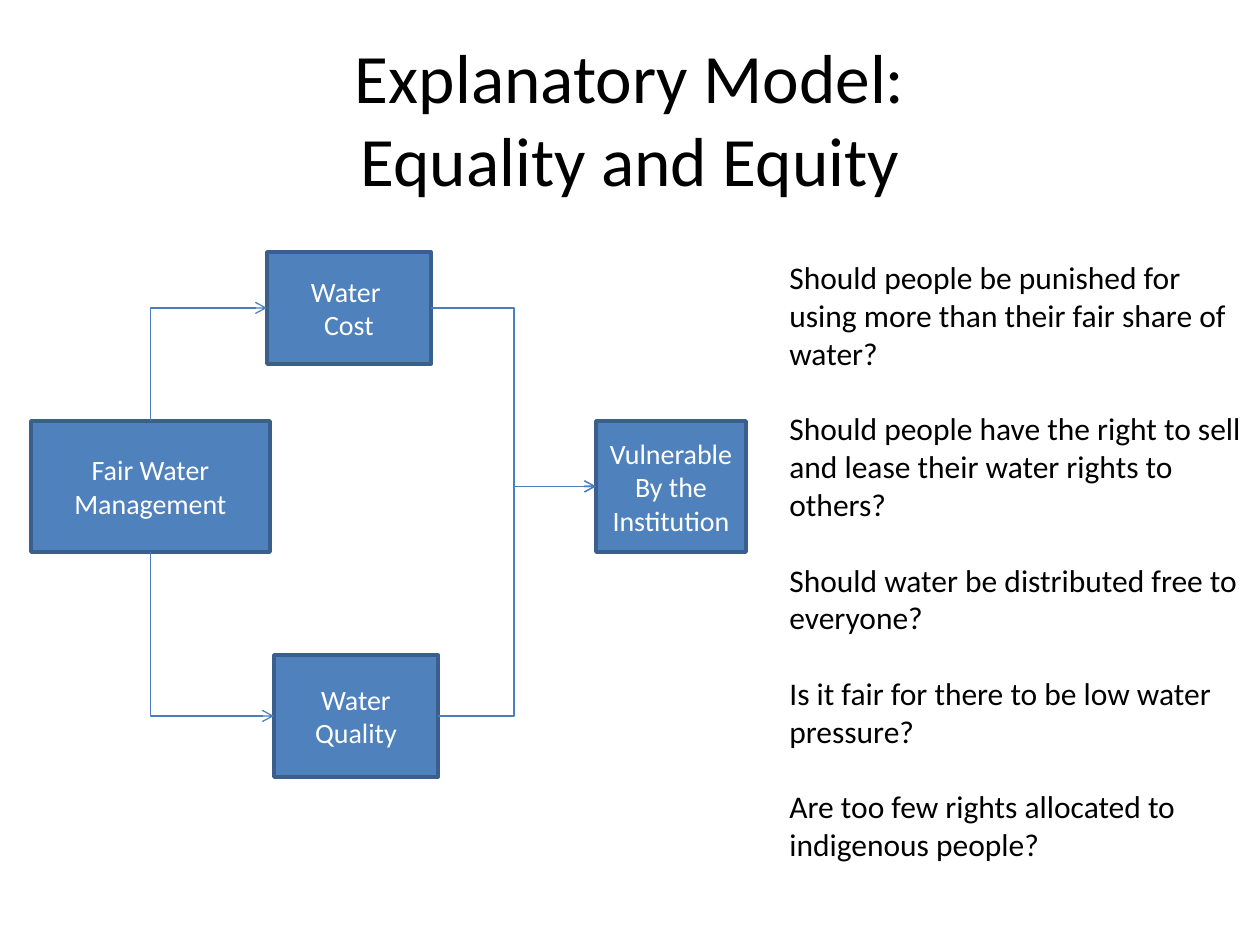
from lxml import etree
from pptx import Presentation
from pptx.dml.color import RGBColor
from pptx.enum.shapes import MSO_CONNECTOR, MSO_SHAPE
from pptx.enum.text import MSO_ANCHOR, PP_ALIGN
from pptx.oxml.ns import qn
from pptx.util import Pt

ELBOW = MSO_CONNECTOR.ELBOW
PROCESS = MSO_SHAPE.FLOWCHART_PROCESS
MIDDLE, TOP = MSO_ANCHOR.MIDDLE, MSO_ANCHOR.TOP
CENTER, LEFT = PP_ALIGN.CENTER, PP_ALIGN.LEFT
BLACK = RGBColor(0x00, 0x00, 0x00)
WHITE = RGBColor(0xFF, 0xFF, 0xFF)
BLUE = RGBColor(0x4F, 0x81, 0xBD)
EDGE = RGBColor(0x3A, 0x5F, 0x8C)
WIRE = RGBColor(0x4B, 0x7E, 0xBC)
FONT = "Calibri"

# Content: left, top, width, height in px
TITLE = "Explanatory Model:\vEquality and Equity"
BOXES = {
    "fair": ("Fair Water Management", (31, 421, 239, 131)),
    "cost": ("Water \nCost", (267, 252, 164, 112)),
    "quality": ("Water Quality", (274, 655, 164, 122)),
    "institution": ("Vulnerable\nBy the Institution", (596, 421, 150, 131)),
}
QUESTIONS = [
    "Should people be punished for using more than their fair share of water?",
    "Should people have the right to sell and lease their water rights to others?",
    "Should water be distributed free to everyone?",
    "Is it fair for there to be low water pressure?",
    "Are too few rights allocated to indigenous people?",
]
# Start box, start side, end box; every arrow enters at the left side
ARROWS = [
    ("fair", "bottom", "quality"),
    ("fair", "top", "cost"),
    ("cost", "right", "institution"),
    ("quality", "right", "institution"),
]
BEND = 514  # x of the shared vertical run


def px(n):
    return round(n * 914400 / 126)


def write(shape, text, size, color, align, anchor, gap=0):
    frame = shape.text_frame
    frame.word_wrap = True
    frame.vertical_anchor = anchor
    frame.text = text
    for para in frame.paragraphs:
        para.alignment = align
        para.space_after = Pt(gap)
        for run in para.runs:
            run.font.name = FONT
            run.font.size = Pt(size)
            run.font.color.rgb = color


def side(name, edge):
    x, y, w, h = BOXES[name][1]
    return {
        "top": (x + w / 2, y),
        "bottom": (x + w / 2, y + h),
        "left": (x, y + h / 2),
        "right": (x + w, y + h / 2),
    }[edge]


def add_arrow(slide, start, edge, end):
    x1, y1 = side(start, edge)
    x2, y2 = side(end, "left")
    line = slide.shapes.add_connector(ELBOW, px(x1), px(y1), px(x2), px(y2))
    line.line.color.rgb = WIRE
    line.line.width = Pt(0.75)
    # A vertical start turns at once, others turn at the shared bend
    bend = BEND if edge == "right" else x1
    ratio = round((bend - x1) / (x2 - x1) * 100000)
    props = line._element.spPr
    guides = props.find(qn("a:prstGeom")).get_or_add_avLst()
    etree.SubElement(guides, qn("a:gd"), name="adj1", fmla=f"val {ratio}")
    etree.SubElement(props.find(qn("a:ln")), qn("a:tailEnd"), type="arrow")
    etree.SubElement(props, qn("a:effectLst"))


def main():
    deck = Presentation()
    deck.slide_width, deck.slide_height = px(1260), px(945)
    slide = deck.slides.add_slide(deck.slide_layouts[6])

    # Title
    title = slide.shapes.add_textbox(px(63), px(38), px(1134), px(158))
    write(title, TITLE, 39.6, BLACK, CENTER, MIDDLE)

    # Boxes of the model
    for text, place in BOXES.values():
        box = slide.shapes.add_shape(PROCESS, *map(px, place))
        box.shadow.inherit = False
        box.fill.solid()
        box.fill.fore_color.rgb = BLUE
        box.line.color.rgb = EDGE
        box.line.width = Pt(2)
        write(box, text, 16, WHITE, CENTER, MIDDLE)

    # Arrows
    for arrow in ARROWS:
        add_arrow(slide, *arrow)

    # Questions
    notes = slide.shapes.add_textbox(px(777), px(252), px(483), px(661))
    write(notes, "\n".join(QUESTIONS), 18, BLACK, LEFT, TOP, gap=21.6)

    deck.save("out.pptx")


if __name__ == "__main__":
    main()
